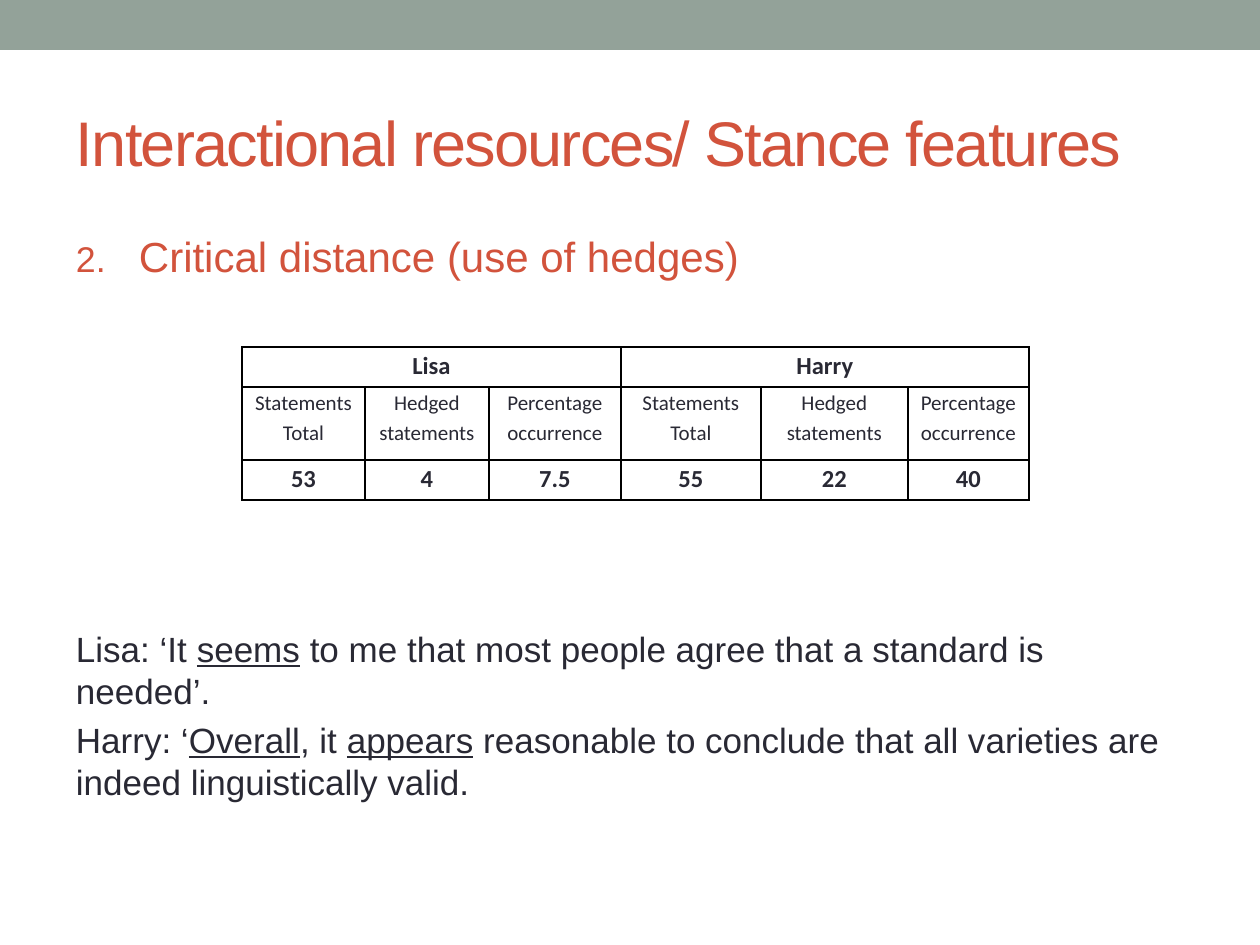
from lxml import etree
from pptx import Presentation
from pptx import util as u
from pptx.dml.color import RGBColor
from pptx.enum import shapes, text
from pptx.oxml.ns import qn

SCALE = 914400 / 126
COLORS = {"band": "93A299", "accent": "D2533C", "ink": "292934", "line": "000000"}
COLS = [123, 124, 132, 140, 147, 121]
ROWS = [40, 73, 40]
HEADS = ["Statements Total", "Hedged statements", "Percentage occurrence"]
CELLS = [
    ["Lisa", "", "", "Harry", "", ""],
    HEADS * 2,
    ["53", "4", "7.5", "55", "22", "40"],
]
QUOTES = [
    [("Lisa: ‘It ", False), ("seems", True),
     (" to me that most people agree that a standard is needed’.", False)],
    [("Harry: ‘", False), ("Overall", True), (", it ", False), ("appears", True),
     (" reasonable to conclude that all varieties are indeed linguistically valid.", False)],
]


def px(n):
    return u.Emu(round(n * SCALE))


def color(name):
    return RGBColor.from_string(COLORS[name])


def style(para, size, name, face="Arial", bold=False):
    font = para.font
    font.size, font.name, font.bold = u.Pt(size), face, bold
    font.color.rgb = color(name)


def add_band(slide, *box):
    band = slide.shapes.add_shape(shapes.MSO_SHAPE.RECTANGLE, *map(px, box))
    band.shadow.inherit = False
    band.fill.solid()
    band.fill.fore_color.rgb = color("band")
    band.line.fill.background()


def add_box(slide, *box):
    """Add a wrapping text frame without insets."""
    frame = slide.shapes.add_textbox(*map(px, box)).text_frame
    frame.word_wrap = True
    frame.margin_left = frame.margin_right = 0
    frame.margin_top = frame.margin_bottom = 0
    return frame


def add_title(slide, words):
    frame = add_box(slide, 76, 73, 1109, 136)
    frame.vertical_anchor = text.MSO_ANCHOR.MIDDLE
    para = frame.paragraphs[0]
    run = para.add_run()
    run.text = words
    style(para, 36, "accent")
    run._r.get_or_add_rPr().set("spc", "-100")


def add_point(slide, words, start):
    """Add a numbered heading with a hanging indent."""
    para = add_box(slide, 76, 231, 1109, 50).paragraphs[0]
    para.text = words
    style(para, 24, "accent")
    props = para._p.get_or_add_pPr()
    props.set("marL", str(px(63)))
    props.set("indent", str(-px(63)))
    bullet = [
        etree.Element(qn("a:buClr")),
        etree.Element(qn("a:buSzPct"), val="85000"),
        etree.Element(qn("a:buFont"), typeface="Arial"),
        etree.Element(qn("a:buAutoNum"), type="arabicPeriod", startAt=str(start)),
    ]
    etree.SubElement(bullet[0], qn("a:srgbClr"), val=COLORS["accent"])
    for i, node in enumerate(bullet):
        props.insert(i, node)


def add_quotes(slide):
    frame = add_box(slide, 76, 627, 1109, 180)
    for i, parts in enumerate(QUOTES):
        para = frame.add_paragraph() if i else frame.paragraphs[0]
        style(para, 20, "ink")
        para.line_spacing = u.Pt(24)
        para.space_before = u.Pt(4 if i else 0)
        for words, under in parts:
            run = para.add_run()
            run.text = words
            if under:
                run.font.underline = True


def set_edges(cell, widths):
    props = cell._tc.get_or_add_tcPr()
    for side, width in widths.items():
        line = etree.SubElement(props, qn("a:ln" + side), w=str(u.Pt(width)))
        fill = etree.SubElement(line, qn("a:solidFill"))
        etree.SubElement(fill, qn("a:srgbClr"), val=COLORS["line"])


def add_grid(slide):
    table = slide.shapes.add_table(
        len(ROWS), len(COLS), px(242), px(347), px(sum(COLS)), px(sum(ROWS))).table
    table.first_row = table.horz_banding = False
    for col, width in zip(table.columns, COLS):
        col.width = px(width)
    for row, height in zip(table.rows, ROWS):
        row.height = px(height)
    for r, line in enumerate(CELLS):
        for c, words in enumerate(line):
            cell = table.cell(r, c)
            cell.margin_left = cell.margin_right = px(9)
            cell.margin_top = cell.margin_bottom = 0
            set_edges(cell, {"L": 1.5 if c == 3 else 1, "R": 1.5 if c == 2 else 1,
                             "T": 1, "B": 1})
            cell.fill.background()
            para = cell.text_frame.paragraphs[0]
            para.text = words
            para.alignment = text.PP_ALIGN.CENTER
            para.line_spacing = 1.15
            style(para, 12 if r == 1 else 14, "ink", "Calibri", r != 1)
    for c in (0, 3):
        table.cell(0, c).merge(table.cell(0, c + 2))


def main():
    deck = Presentation()
    deck.slide_width, deck.slide_height = px(1260), px(945)
    slide = deck.slides.add_slide(deck.slide_layouts[6])
    add_band(slide, 0, 0, 1260, 50)
    add_title(slide, "Interactional resources/ Stance features")
    add_point(slide, "Critical distance (use of hedges)", 2)
    add_quotes(slide)
    add_grid(slide)
    deck.save("out.pptx")


if __name__ == "__main__":
    main()
